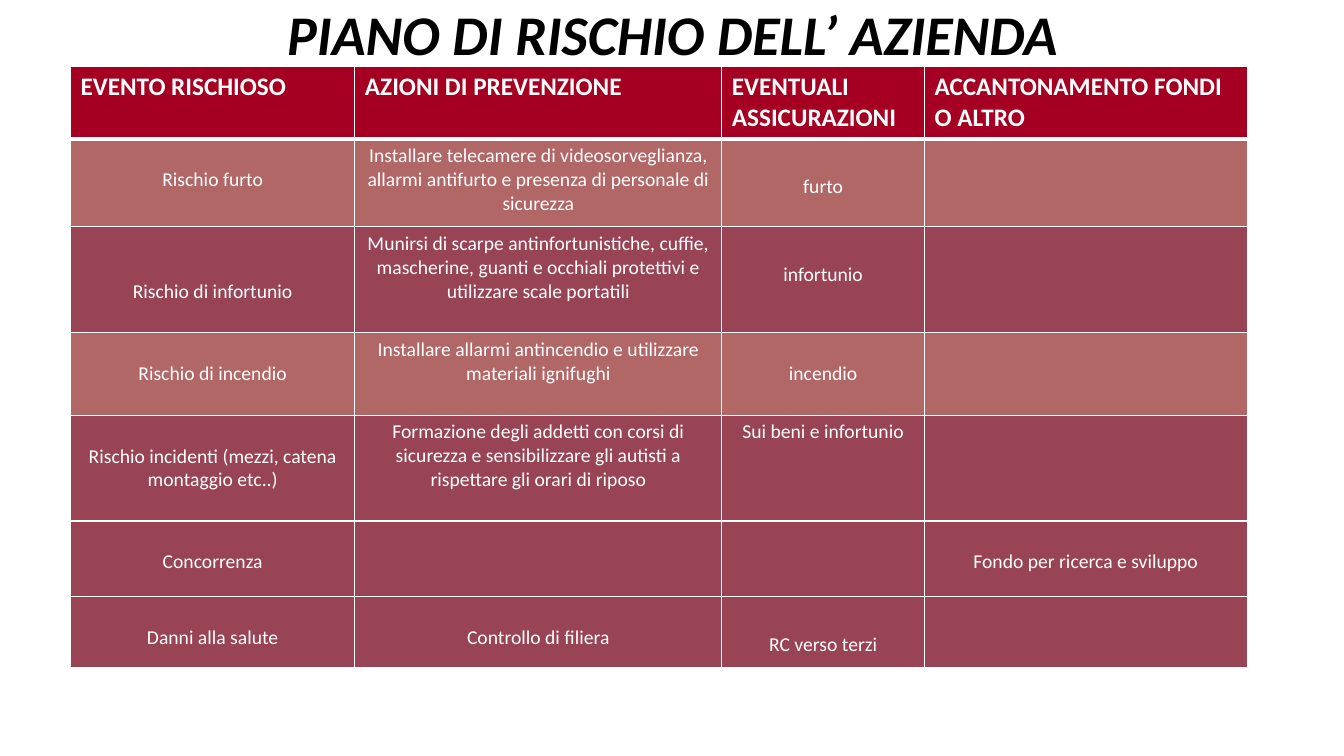
"""Builds the company risk plan slide: a title above a table of risks."""
from lxml.etree import SubElement
from pptx import Presentation
from pptx.dml.color import RGBColor
from pptx.enum.text import MSO_ANCHOR, MSO_AUTO_SIZE, PP_ALIGN
from pptx.oxml.ns import qn
from pptx.util import Inches, Pt

FONT = "Calibri"
WHITE, BLACK = "FFFFFF", "000000"
RED, ROSE, WINE = "A50021", "B26767", "984455"

TITLE = "PIANO DI RISCHIO DELL’ AZIENDA"
HEADERS = ["EVENTO RISCHIOSO", "AZIONI DI PREVENZIONE",
           "EVENTUALI ASSICURAZIONI", "ACCANTONAMENTO FONDI O ALTRO"]
COLUMN_WIDTHS = [2.82, 3.64, 2.01, 3.2]
HEADER_HEIGHT = 0.72
CELL_MARGIN = 0.05

# Each risk: height, fill, then (text, drop below the top margin) per column.
EMPTY = ("", 0)
RISKS = [
    (0.87, ROSE, [
        ("Rischio furto", 0.24),
        ("Installare telecamere di videosorveglianza, allarmi antifurto "
         "e presenza di personale di sicurezza", 0),
        ("furto", 0.31), EMPTY]),
    (1.05, WINE, [
        ("Rischio di infortunio", 0.48),
        ("Munirsi di scarpe antinfortunistiche, cuffie, mascherine, guanti "
         "e occhiali protettivi e utilizzare scale portatili", 0),
        ("infortunio", 0.31), EMPTY]),
    (0.82, ROSE, [
        ("Rischio di incendio", 0.24),
        ("Installare allarmi antincendio e utilizzare materiali ignifughi", 0),
        ("incendio", 0.24), EMPTY]),
    (1.05, WINE, [
        ("Rischio incidenti (mezzi, catena montaggio etc..)", 0.24),
        ("Formazione degli addetti con corsi di sicurezza e sensibilizzare "
         "gli autisti a rispettare gli orari di riposo", 0),
        ("Sui beni e infortunio", 0), EMPTY]),
    (0.75, WINE, [
        ("Concorrenza", 0.24), EMPTY, EMPTY,
        ("Fondo per ricerca e sviluppo", 0.24)]),
    (0.7, WINE, [
        ("Danni alla salute", 0.24), ("Controllo di filiera", 0.24),
        ("RC verso terzi", 0.31), EMPTY]),
]


def color(value):
    return RGBColor.from_string(value)


def style_font(font, size, value, bold, italic=False):
    font.name = FONT
    font.size = Pt(size)
    font.bold = bold
    font.italic = italic
    font.color.rgb = color(value)


def add_borders(cell, widths):
    properties = cell._tc.get_or_add_tcPr()
    for index, (side, points) in enumerate(widths.items()):
        line = properties.makeelement(qn(f"a:{side}"), {"w": str(Pt(points))})
        fill = SubElement(line, qn("a:solidFill"))
        SubElement(fill, qn("a:srgbClr"), val=WHITE)
        properties.insert(index, line)


def fill_cell(cell, text, drop, background, size, bold, align, borders):
    cell.fill.solid()
    cell.fill.fore_color.rgb = color(background)
    cell.vertical_anchor = MSO_ANCHOR.TOP
    cell.margin_top = Inches(CELL_MARGIN + drop)
    cell.text = text
    para = cell.text_frame.paragraphs[0]
    para.alignment = align
    style_font(para.font, size, WHITE, bold)
    add_borders(cell, borders)


def add_title(page):
    title = page.shapes.title
    title.left, title.top = Inches(0.92), Inches(0)
    title.width, title.height = Inches(11.5), Inches(0.75)
    frame = title.text_frame
    frame.text = TITLE
    frame.auto_size = MSO_AUTO_SIZE.NONE
    frame.vertical_anchor = MSO_ANCHOR.MIDDLE
    para = frame.paragraphs[0]
    para.alignment = PP_ALIGN.CENTER
    para.line_spacing = 0.9
    style_font(para.font, 40, BLACK, bold=True, italic=True)


def add_risk_table(page):
    heights = [HEADER_HEIGHT] + [height for height, _, _ in RISKS]
    table = page.shapes.add_table(
        len(heights), len(HEADERS), Inches(0.7), Inches(0.66),
        Inches(sum(COLUMN_WIDTHS)), Inches(sum(heights))).table
    table.horz_banding = False
    for column, width in zip(table.columns, COLUMN_WIDTHS):
        column.width = Inches(width)
    for row, height in zip(table.rows, heights):
        row.height = Inches(height)

    thin = {"lnL": 1, "lnR": 1, "lnT": 1, "lnB": 1}
    for column, text in enumerate(HEADERS):
        fill_cell(table.cell(0, column), text, 0, RED, 18, True,
                  PP_ALIGN.LEFT, {**thin, "lnB": 3})
    for row, (_, background, entries) in enumerate(RISKS, start=1):
        borders = {**thin, "lnT": 3} if row == 1 else thin
        for column, (text, drop) in enumerate(entries):
            fill_cell(table.cell(row, column), text, drop, background, 14,
                      False, PP_ALIGN.CENTER, borders)


def main():
    deck = Presentation()
    deck.slide_width, deck.slide_height = Inches(13.33), Inches(7.5)
    page = deck.slides.add_slide(deck.slide_layouts.get_by_name("Title Only"))
    add_title(page)
    add_risk_table(page)
    deck.save("out.pptx")


if __name__ == "__main__":
    main()
